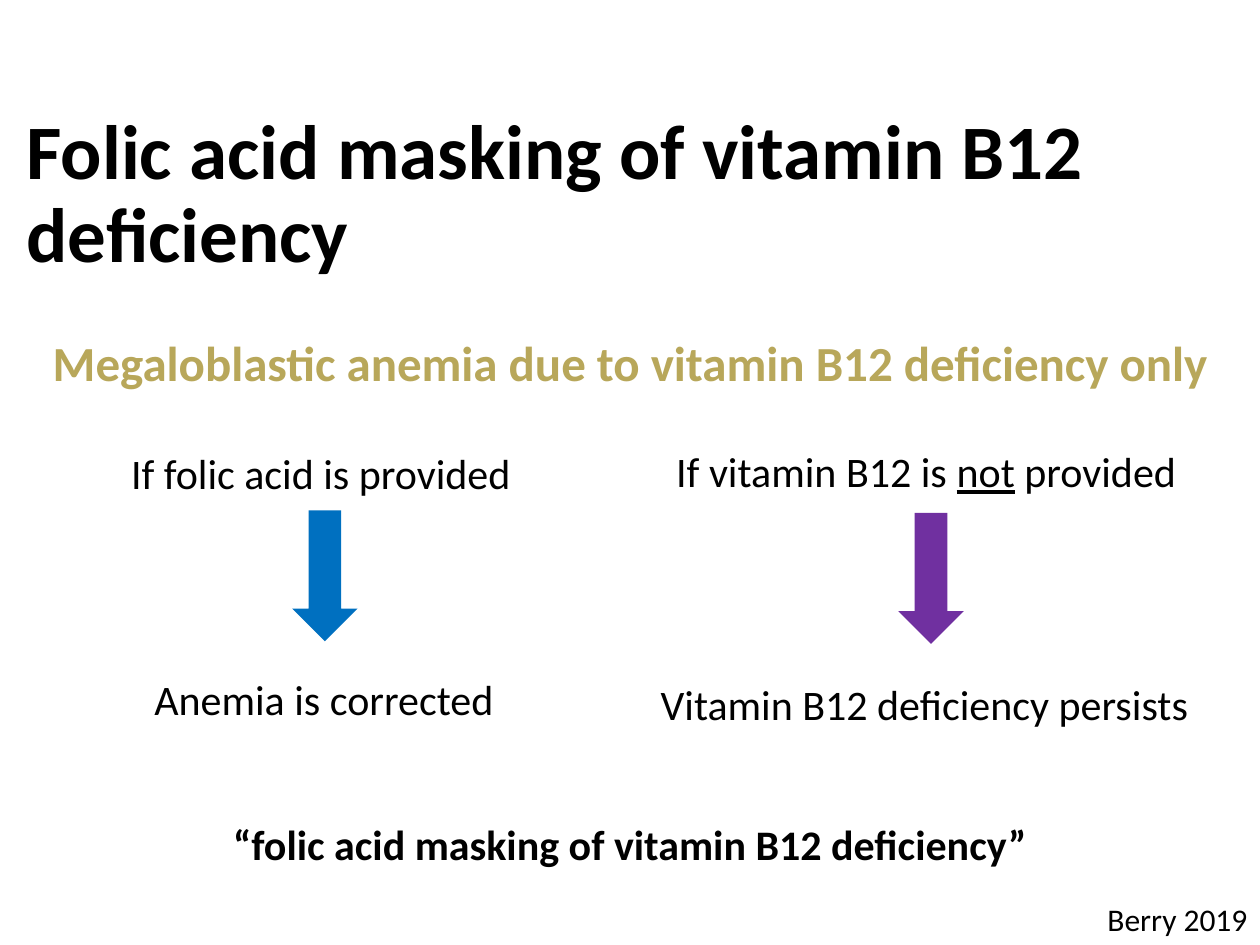
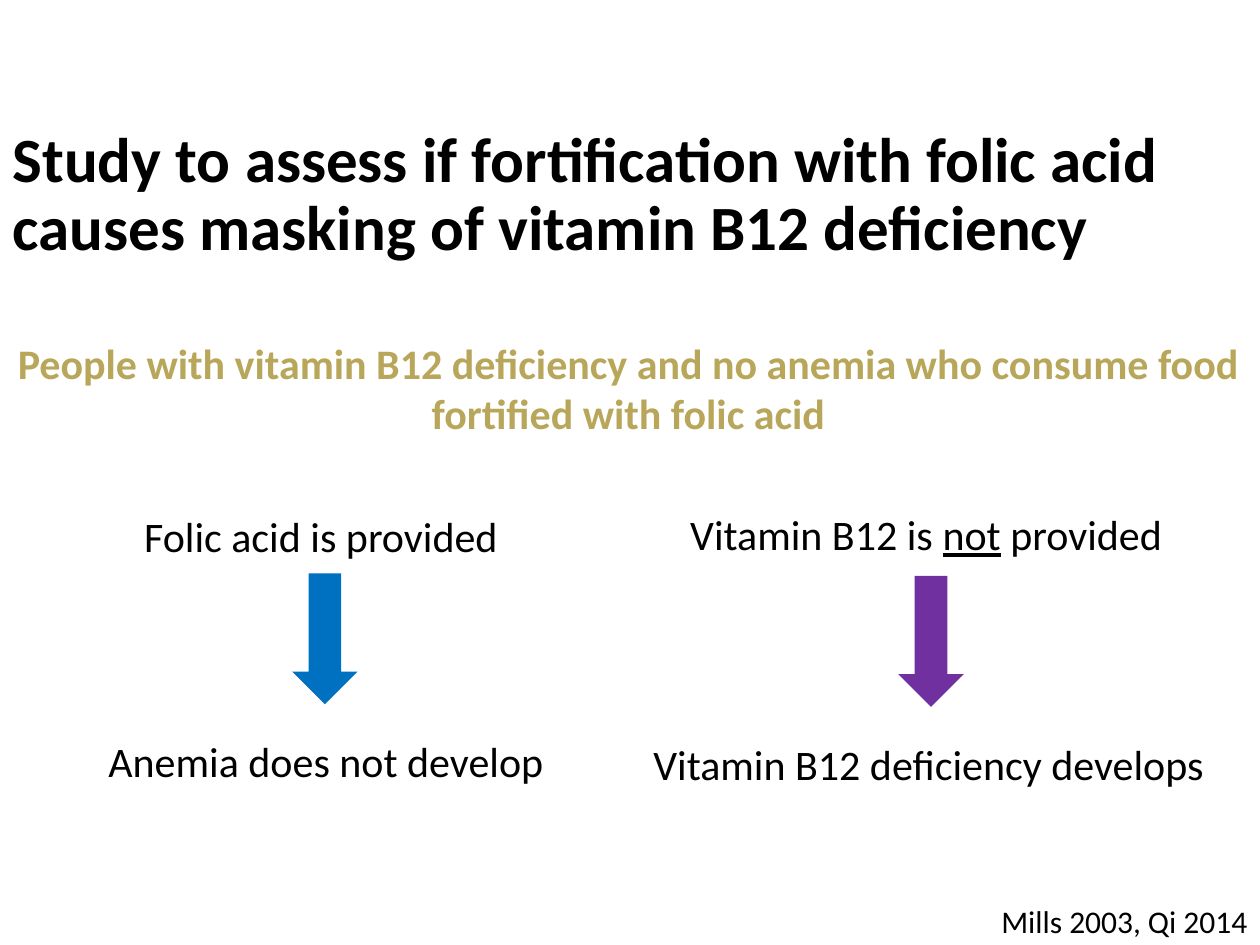
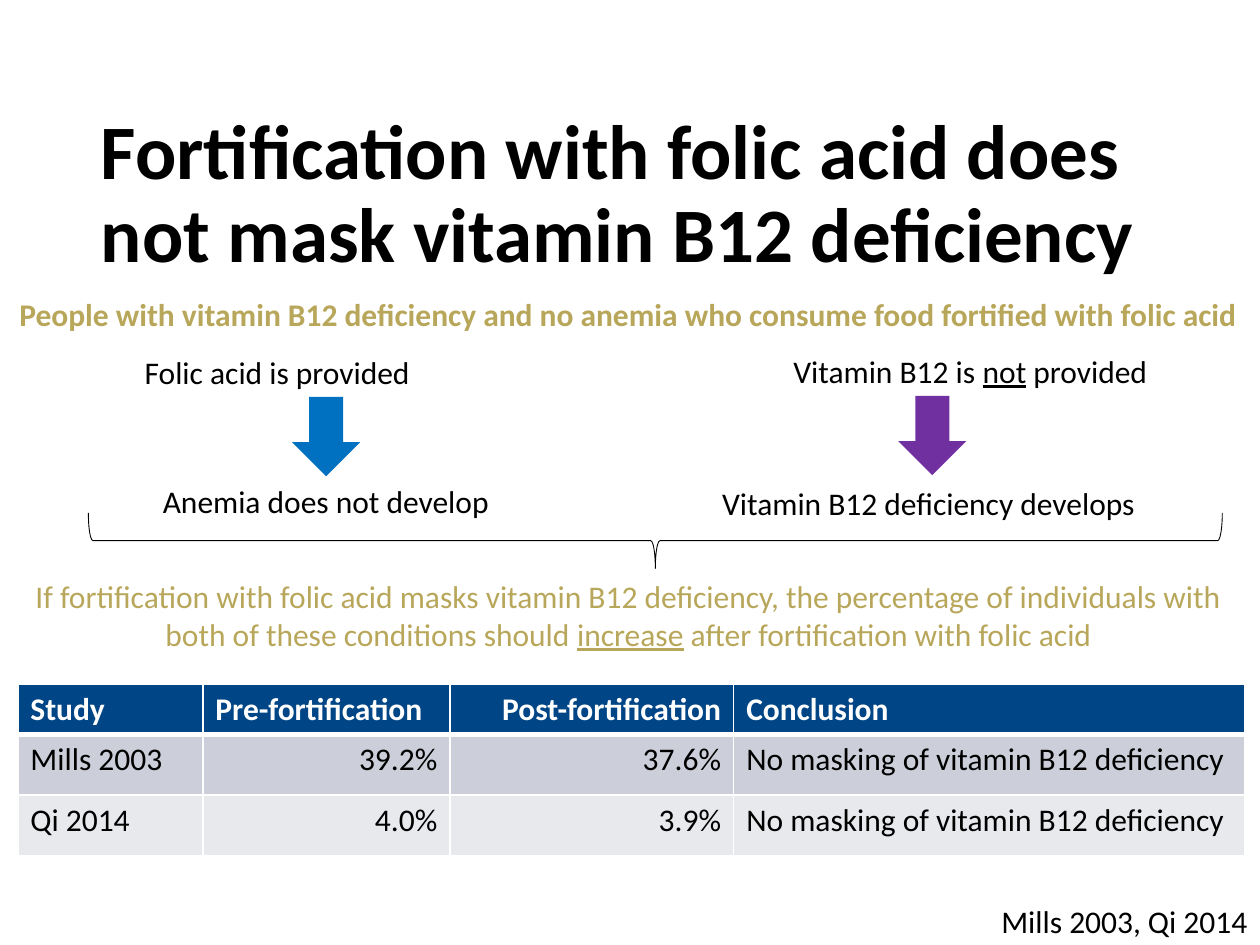
"""Build three slides on folic acid and the masking of vitamin B12 deficiency."""
from lxml.etree import SubElement
from pptx import Presentation
from pptx.dml.color import RGBColor
from pptx.enum.shapes import MSO_SHAPE
from pptx.enum.text import MSO_ANCHOR, MSO_AUTO_SIZE, PP_ALIGN
from pptx.oxml.ns import qn
from pptx.util import Cm, Pt

BLACK, WHITE, GOLD = "000000", "FFFFFF", "B8A75A"
BLUE, PURPLE, NAVY = "0070C0", "7030A0", "004585"
BANDS = [NAVY, "CCCFD9", "E7E9ED"]
LEFT, CENTER, RIGHT = PP_ALIGN.LEFT, PP_ALIGN.CENTER, PP_ALIGN.RIGHT
TITLE_ONLY = 5


def rgb(color):
    return RGBColor.from_string(color)


def write(tf, text, size, color=BLACK, bold=False, align=CENTER):
    """Fill a text frame; words between underscores are underlined."""
    p = tf.paragraphs[0]
    p.alignment = align
    for i, part in enumerate(text.split("_")):
        r = p.add_run()
        r.text = part
        style = {"name": "Calibri", "size": Pt(size), "bold": bold, "underline": i % 2 == 1}
        for name, value in style.items():
            setattr(r.font, name, value)
        r.font.color.rgb = rgb(color)


plain = {"color": BLACK}
gold = {"color": GOLD}
gold_bold = {"color": GOLD, "bold": True}
people = "People with vitamin B12 deficiency and no anemia who consume food fortified with folic acid"

slides = [
    {
        "title": ("Folic acid masking of vitamin B12 deficiency", 44, 0.28, 21.89),
        "texts": [
            ("If folic acid is provided", 24, (1.24, 8.89, 10.46, 1.27), plain),
            ("If vitamin B12 is _not_ provided", 24, (13.16, 8.86, 11.02, 1.27), plain),
            ("Anemia is corrected", 24, (2.82, 13.46, 7.42, 1.27), plain),
            ("Vitamin B12 deficiency persists", 24, (12.55, 13.56, 12.17, 1.27), plain),
            ("“folic acid masking of vitamin B12 deficiency”", 24, (0, 16.38, 25.4, 1.27), {"bold": True}),
            ("Megaloblastic anemia due to vitamin B12 deficiency only", 28, (0, 6.58, 25.4, 1.45), gold_bold),
            ("Berry 2019", 18, (19, 18.01, 6.4, 1.02), {"align": RIGHT}),
        ],
        "arrows": ((10.29, 10.34), 1.32, 2.64),
    },
    {
        "title": ("Study to assess if fortification with folic acid causes masking of vitamin B12 deficiency", 36, 0, 25.37),
        "texts": [
            ("Folic acid is provided", 24, (1.24, 10.16, 10.46, 1.27), plain),
            ("Vitamin B12 is _not_ provided", 24, (13.16, 10.13, 11.02, 1.27), plain),
            ("Anemia does not develop", 24, (1.78, 14.71, 9.58, 1.27), plain),
            ("Vitamin B12 deficiency develops", 24, (12.8, 14.76, 11.84, 1.27), plain),
            (people, 24, (-0.03, 6.68, 25.4, 2.31), gold_bold),
            ("Mills 2003, Qi 2014", 18, (18.42, 18.06, 6.98, 1.02), {"align": RIGHT}),
        ],
        "arrows": ((11.56, 11.61), 1.32, 2.64),
    },
    {
        "title": ("Fortification with folic acid does not mask vitamin B12 deficiency", 44, 1.78, 21.89),
        "texts": [
            ("Mills 2003, Qi 2014", 18, (18.42, 18.06, 6.98, 1.02), {"align": RIGHT}),
            ("If fortification with folic acid masks vitamin B12 deficiency, the percentage of individuals "
             "with both of these conditions should _increase_ after fortification with folic acid",
             18, (-0.03, 11.51, 25.4, 1.8), gold),
            ("Folic acid is provided", 18, (0.36, 6.99, 10.46, 1.02), plain),
            ("Vitamin B12 is _not_ provided", 18, (14.05, 6.97, 11.02, 1.02), plain),
            ("Anemia does not develop", 18, (1.78, 9.6, 9.58, 1.02), plain),
            ("Vitamin B12 deficiency develops", 18, (12.8, 9.63, 11.84, 1.02), plain),
            (people, 18, (-0.03, 5.82, 25.4, 1.02), gold_bold),
        ],
        "arrows": ((8, 7.98), 1.37, 1.6),
    },
]

prs = Presentation()
prs.slide_width, prs.slide_height = Cm(25.4), Cm(19.05)

for content in slides:
    s = prs.slides.add_slide(prs.slide_layouts[TITLE_ONLY])
    text, size, left, width = content["title"]
    title = s.shapes.title
    title.left, title.top, title.width, title.height = Cm(left), Cm(2.11), Cm(width), Cm(3.68)
    tf = title.text_frame
    tf.auto_size, tf.vertical_anchor = MSO_AUTO_SIZE.NONE, MSO_ANCHOR.MIDDLE
    write(tf, text, size, bold=True, align=LEFT)
    tf.paragraphs[0].line_spacing = 0.9

    for text, size, place, style in content["texts"]:
        tf = s.shapes.add_textbox(*map(Cm, place)).text_frame
        tf.word_wrap, tf.auto_size = True, MSO_AUTO_SIZE.SHAPE_TO_FIT_TEXT
        write(tf, text, size, **style)

    tops, width, height = content["arrows"]
    for left, top, color in zip((5.89, 18.11), tops, (BLUE, PURPLE)):
        arrow = s.shapes.add_shape(MSO_SHAPE.DOWN_ARROW, Cm(left), Cm(top), Cm(width), Cm(height))
        arrow.shadow.inherit = False
        arrow.fill.solid()
        arrow.fill.fore_color.rgb = rgb(color)
        arrow.line.fill.background()

brace = s.shapes.add_shape(MSO_SHAPE.RIGHT_BRACE, Cm(12.65), Cm(-0.53), Cm(1.12), Cm(22.86))
brace.rotation = 90
brace.shadow.inherit = False
brace.fill.background()
brace.line.color.rgb = rgb(BLACK)
brace.line.width = Pt(0.5)

rows = [
    ("Study", "Pre-fortification", "Post-fortification", "Conclusion"),
    ("Mills 2003", "39.2%", "37.6%", "No masking of vitamin B12 deficiency"),
    ("Qi 2014", "4.0%", "3.9%", "No masking of vitamin B12 deficiency"),
]
table = s.shapes.add_table(3, 4, Cm(0.36), Cm(13.79), Cm(24.74), Cm(3.45)).table
for column, width in zip(table.columns, (3.73, 4.98, 5.72, 10.31)):
    column.width = Cm(width)
for row, height in zip(table.rows, (1.01, 1.22, 1.22)):
    row.height = Cm(height)

for i, row in enumerate(rows):
    header = i == 0
    for j, text in enumerate(row):
        cell = table.cell(i, j)
        numeric = j == 2 or (j == 1 and not header)
        write(cell.text_frame, text, 18, WHITE if header else BLACK, header, RIGHT if numeric else LEFT)
        tcPr = cell._tc.get_or_add_tcPr()
        heavy = {0: "lnB", 1: "lnT"}.get(i)
        for side in ("lnL", "lnR", "lnT", "lnB"):
            ln = SubElement(tcPr, qn(f"a:{side}"), w=str(Pt(3 if side == heavy else 1)))
            SubElement(SubElement(ln, qn("a:solidFill")), qn("a:srgbClr"), val=WHITE)
        cell.fill.solid()
        cell.fill.fore_color.rgb = rgb(BANDS[i])

prs.save("out.pptx")
